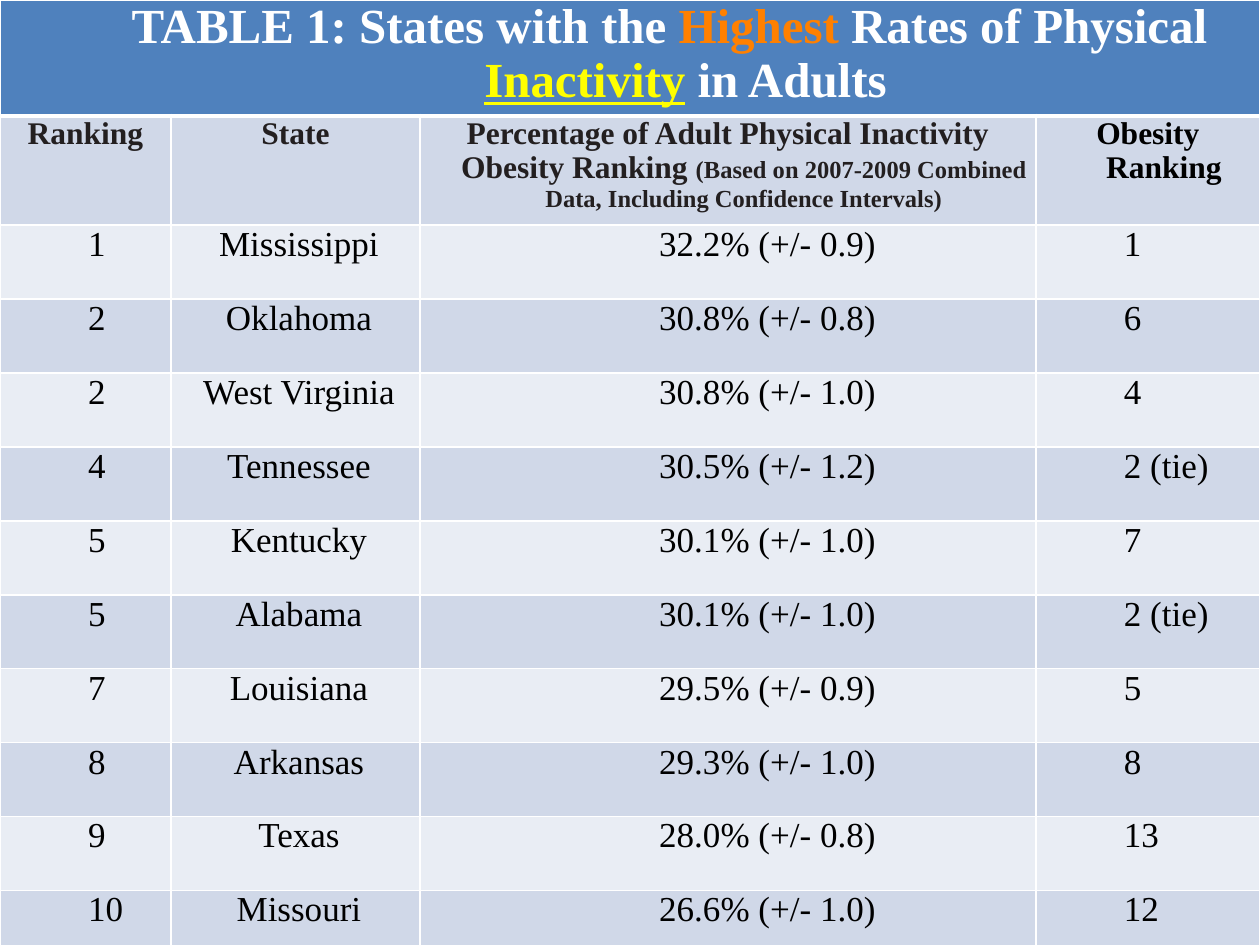
from dataclasses import dataclass

import pptx
import pptx.dml.color
import pptx.enum.text
import pptx.oxml
import pptx.oxml.ns
import pptx.util

PX = 914400 / 126  # EMU in one px
CENTER = pptx.enum.text.PP_ALIGN.CENTER
LEFT = pptx.enum.text.PP_ALIGN.LEFT


def px(length):
    return pptx.util.Emu(round(length * PX))


def rgb(code):
    return pptx.dml.color.RGBColor.from_string(code)


@dataclass(frozen=True)
class Theme:
    font: str = "Times New Roman"
    title_fill: str = "4F81BD"
    dark_band: str = "D0D8E8"
    light_band: str = "E9EDF4"
    white: str = "FFFFFF"
    black: str = "000000"
    heading: str = "231F20"
    orange: str = "FF8000"
    yellow: str = "FFFF00"
    title_size: int = 28
    heading_size: int = 18
    note_size: int = 14
    body_size: int = 20


@dataclass
class SlideBuilder:
    theme: Theme
    slide: object

    def table(self, column_widths, row_heights):
        frame = self.slide.shapes.add_table(
            len(row_heights), len(column_widths), 0, 0,
            px(sum(column_widths)), px(sum(row_heights)))
        table = frame.table
        table.first_row = table.horz_banding = False
        for column, width in zip(table.columns, column_widths):
            column.width = px(width)
        for row, height in zip(table.rows, row_heights):
            row.height = px(height)
        return table

    def cell(self, cell, runs, fill, size, color, bold=False, align=CENTER,
             margin=111, space=6, top=1, bottom=1):
        """Fill a cell; each run is (text, {font attribute: value})."""
        cell.margin_left = cell.margin_right = px(9)
        cell.margin_top = cell.margin_bottom = 0
        self.borders(cell, L=1, R=1, T=top, B=bottom)
        cell.fill.solid()
        cell.fill.fore_color.rgb = rgb(fill)

        paragraph = cell.text_frame.paragraphs[0]
        paragraph.alignment = align
        paragraph.space_before = paragraph.space_after = pptx.util.Pt(space)
        properties = paragraph._p.get_or_add_pPr()
        properties.set("marL", str(px(margin)))
        properties.set("indent", str(px(-32)))
        self.style(paragraph.font, size=size, color=color, bold=bold)
        paragraph.font.name = self.theme.font
        for text, changes in runs:
            run = paragraph.add_run()
            run.text = text
            self.style(run.font, **changes)

    def style(self, font, size=None, color=None, bold=None, underline=None):
        if size:
            font.size = pptx.util.Pt(size)
        if color:
            font.color.rgb = rgb(color)
        if bold is not None:
            font.bold = bold
        if underline is not None:
            font.underline = underline

    def borders(self, cell, **widths):
        properties = cell._tc.get_or_add_tcPr()
        for side, width in widths.items():
            properties.append(pptx.oxml.parse_xml(
                f'<a:ln{side} {pptx.oxml.ns.nsdecls("a")} w="{pptx.util.Pt(width)}">'
                f'<a:solidFill><a:srgbClr val="{self.theme.white}"/></a:solidFill>'
                f'</a:ln{side}>'))


STATES = [
    ("1", "Mississippi", "32.2% (+/- 0.9)", "1"),
    ("2", "Oklahoma", "30.8% (+/- 0.8)", "6"),
    ("2", "West Virginia", "30.8% (+/- 1.0)", "4"),
    ("4", "Tennessee", "30.5% (+/- 1.2)", "2 (tie)"),
    ("5", "Kentucky", "30.1% (+/- 1.0)", "7"),
    ("5", "Alabama", "30.1% (+/- 1.0)", "2 (tie)"),
    ("7", "Louisiana", "29.5% (+/- 0.9)", "5"),
    ("8", "Arkansas", "29.3% (+/- 1.0)", "8"),
    ("9", "Texas", "28.0% (+/- 0.8)", "13"),
    ("10", "Missouri", "26.6% (+/- 1.0)", "12"),
]


def main():
    theme = Theme()
    deck = pptx.Presentation()
    deck.slide_width, deck.slide_height = px(1260), px(945)
    builder = SlideBuilder(theme, deck.slides.add_slide(deck.slide_layouts[6]))
    ranking = builder.table([171, 249, 616, 224], [116, 109] + [74] * len(STATES))

    # Title row across all columns
    ranking.cell(0, 0).merge(ranking.cell(0, 3))
    title = [
        ("TABLE 1: States with the ", {}),
        ("Highest", {"color": theme.orange}),
        (" Rates of Physical ", {}),
        ("Inactivity", {"color": theme.yellow, "underline": True}),
        (" in Adults", {}),
    ]
    builder.cell(ranking.cell(0, 0), title, theme.title_fill, theme.title_size,
                 theme.white, bold=True, space=12, bottom=3)

    # Column headings
    headings = [
        ([("Ranking", {})], theme.heading),
        ([("State", {})], theme.heading),
        ([("Percentage of Adult Physical Inactivity Obesity Ranking ", {}),
          ("(Based on 2007-2009 Combined Data, Including Confidence Intervals)",
           {"size": theme.note_size})], theme.heading),
        ([("Obesity Ranking", {})], theme.black),
    ]
    for column, (runs, color) in enumerate(headings):
        builder.cell(ranking.cell(1, column), runs, theme.dark_band,
                     theme.heading_size, color, bold=True, margin=32, top=3)

    # One banded row for each state
    layouts = [(LEFT, 111), (CENTER, 39), (CENTER, 111), (LEFT, 111)]
    for index, state in enumerate(STATES):
        band = theme.dark_band if index % 2 else theme.light_band
        for column, (text, (align, margin)) in enumerate(zip(state, layouts)):
            builder.cell(ranking.cell(index + 2, column), [(text, {})], band,
                         theme.body_size, theme.black, align=align, margin=margin)

    deck.save("out.pptx")


if __name__ == "__main__":
    main()
